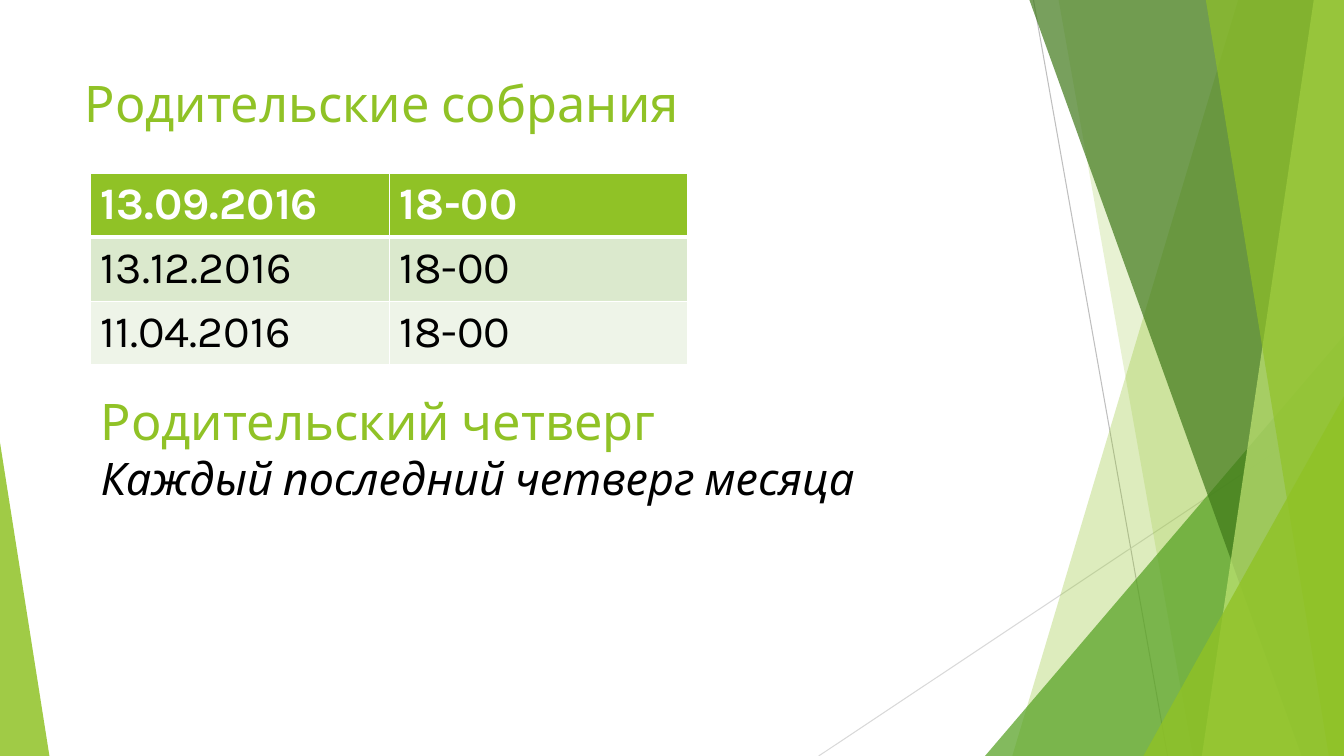
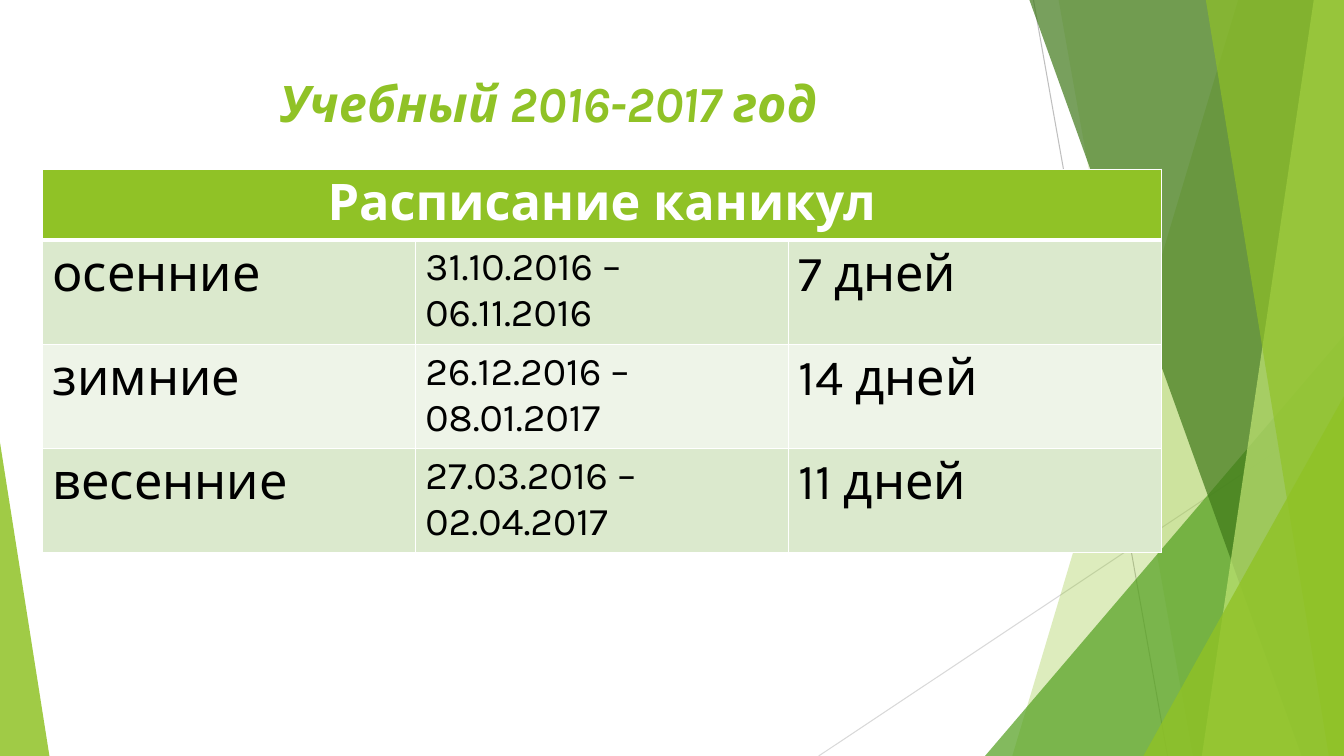
from dataclasses import dataclass

from lxml.etree import SubElement
from pptx import Presentation
from pptx.dml.color import RGBColor
from pptx.enum.shapes import MSO_CONNECTOR as CONN, MSO_SHAPE as SHAPE
from pptx.enum.text import PP_ALIGN as ALIGN
from pptx.oxml.ns import qn
from pptx.util import Inches, Pt

# Shared style
FONT = "Karla"
GREEN, WHITE, BLACK = "90C226", "FFFFFF", "000000"
BAND_FILLS = ("DBE9CD", "EEF4E8")
WIDTH, HEIGHT = 13.33, 7.5


@dataclass(frozen=True)
class Ray:
    start: tuple[float, float]
    end: tuple[float, float]
    color: str


@dataclass(frozen=True)
class Band:
    """A band from its slanted left edge to the right side of the slide."""
    top_x: float
    bottom_x: float
    color: str
    opacity: int


@dataclass(frozen=True)
class Corner:
    """A triangle standing on the bottom of the slide, its tip at one side."""
    left: float
    top: float
    width: float
    tip: float
    color: str
    opacity: int


@dataclass(frozen=True)
class Line:
    text: str
    size: int = 36
    color: str = GREEN
    bold: bool = False
    italic: bool = False
    align: ALIGN = ALIGN.LEFT


# Decoration, from back to front
DECORATION = (
    Ray((10.25, 0), (11.58, HEIGHT), "BFBFBF"),
    Ray((WIDTH, 4.03), (8.12, HEIGHT), "D9D9D9"),
    Band(12.28, 10.04, GREEN, 30),
    Band(10.5, 11.83, GREEN, 20),
    Corner(9.77, 3.33, 3.56, 1, "54A021", 72),
    Band(10.21, 12.91, "3F7819", 70),
    Band(13.03, 11.92, "C0E474", 70),
    Band(11.96, 13.18, GREEN, 65),
    Corner(11.34, 3.93, 1.99, 1, GREEN, 80),
    Corner(0, 4.39, 0.49, 0, GREEN, 85),
)


def rgb(color: str) -> RGBColor:
    return RGBColor.from_string(color)


def paint(s, color: str, opacity: int) -> None:
    s.shadow.inherit = False
    s.line.fill.background()
    s.fill.solid()
    s.fill.fore_color.rgb = rgb(color)
    clr = next(s._element.spPr.iter(qn("a:srgbClr")))
    SubElement(clr, qn("a:alpha"), val=str(opacity * 1000))


def draw_ray(slide, ray: Ray) -> None:
    ends = [Inches(v) for v in ray.start + ray.end]
    s = slide.shapes.add_connector(CONN.STRAIGHT, *ends)
    s.line.color.rgb = rgb(ray.color)
    s.line.width = Pt(0.75)
    SubElement(s._element.spPr, qn("a:effectLst"))


def draw_band(slide, band: Band) -> None:
    corners = [(WIDTH, 0), (WIDTH, HEIGHT), (band.bottom_x, HEIGHT)]
    outline = slide.shapes.build_freeform(Inches(band.top_x), 0)
    outline.add_line_segments([(Inches(x), Inches(y)) for x, y in corners])
    paint(outline.convert_to_shape(), band.color, band.opacity)


def draw_corner(slide, corner: Corner) -> None:
    box = (corner.left, corner.top, corner.width, HEIGHT - corner.top)
    s = slide.shapes.add_shape(SHAPE.ISOSCELES_TRIANGLE, *map(Inches, box))
    s.adjustments[0] = corner.tip
    paint(s, corner.color, corner.opacity)


DRAWERS = {Ray: draw_ray, Band: draw_band, Corner: draw_corner}


def add_slide(prs):
    slide = prs.slides.add_slide(prs.slide_layouts[6])
    for part in DECORATION:
        DRAWERS[type(part)](slide, part)
    return slide


def write(p, line: Line) -> None:
    p.text = line.text
    p.alignment = line.align
    for r in p.runs:
        r.font.name = FONT
        r.font.size = Pt(line.size)
        r.font.bold = line.bold
        r.font.italic = line.italic
        r.font.color.rgb = rgb(line.color)


def add_text(slide, left: float, top: float, *lines: Line) -> None:
    s = slide.shapes.add_textbox(Inches(left), Inches(top), Inches(9.4), Inches(1.44))
    tf = s.text_frame
    tf.word_wrap = True
    for i, line in enumerate(lines):
        write(tf.add_paragraph() if i else tf.paragraphs[0], line)


def set_borders(cell, row: int) -> None:
    """White rules, thicker between the header and the body."""
    widths = {"L": 1, "R": 1, "T": 3 if row == 1 else 1, "B": 3 if row == 0 else 1}
    tcPr = cell._tc.get_or_add_tcPr()
    for side, width in widths.items():
        ln = SubElement(tcPr, qn(f"a:ln{side}"), w=str(Pt(width)))
        SubElement(SubElement(ln, qn("a:solidFill")), qn("a:srgbClr"), val=WHITE)


def add_table(slide, left: float, top: float, col_width: float,
              heights: list[float], rows: list[list[str]], sizes: list[int]) -> None:
    """Draw a banded table; a header with a single text spans all columns."""
    n_cols = len(sizes)
    table = slide.shapes.add_table(
        len(rows), n_cols, Inches(left), Inches(top),
        Inches(col_width * n_cols), Inches(sum(heights))).table
    for col in table.columns:
        col.width = Inches(col_width)
    for r, (height, texts) in enumerate(zip(heights, rows)):
        table.rows[r].height = Inches(height)
        spans = len(texts) < n_cols
        for c in range(n_cols):
            cell = table.cell(r, c)
            set_borders(cell, r)
            cell.fill.solid()
            cell.fill.fore_color.rgb = rgb(BAND_FILLS[(r - 1) % 2] if r else GREEN)
            if c < len(texts):
                write(cell.text_frame.paragraphs[0],
                      Line(texts[c], sizes[c], BLACK if r else WHITE, bold=r == 0,
                           align=ALIGN.CENTER if spans else ALIGN.LEFT))
        if spans:
            table.cell(r, 0).merge(table.cell(r, n_cols - 1))


def add_title(slide, line: Line) -> None:
    add_text(slide, 0.74, 0.67, line)


def build_meetings(prs) -> None:
    slide = add_slide(prs)
    add_title(slide, Line("Родительские собрания"))
    dates = ["13.09.2016", "13.12.2016", "11.04.2016"]
    add_table(slide, 0.9, 1.72, 2.96, [0.62] * 3,
              [[date, "18-00"] for date in dates], [32, 32])
    add_text(slide, 0.9, 3.82, Line("Родительский четверг"),
             Line("Каждый последний четверг месяца", 32, BLACK, italic=True))


def build_holidays(prs) -> None:
    slide = add_slide(prs)
    add_title(slide, Line("Учебный 2016-2017 год", bold=True, italic=True,
                          align=ALIGN.CENTER))
    rows = [
        ["Расписание каникул"],
        ["осенние", "31.10.2016 – 06.11.2016", "7 дней"],
        ["зимние", "26.12.2016 – 08.01.2017", "14 дней"],
        ["весенние", "27.03.2016 – 02.04.2017", "11 дней"],
    ]
    add_table(slide, 0.42, 1.68, 3.7, [0.68] + [1.01] * 3, rows, [36, 28, 36])


def main() -> None:
    prs = Presentation()
    prs.slide_width, prs.slide_height = Inches(WIDTH), Inches(HEIGHT)
    build_meetings(prs)
    build_holidays(prs)
    prs.save("out.pptx")


if __name__ == "__main__":
    main()
